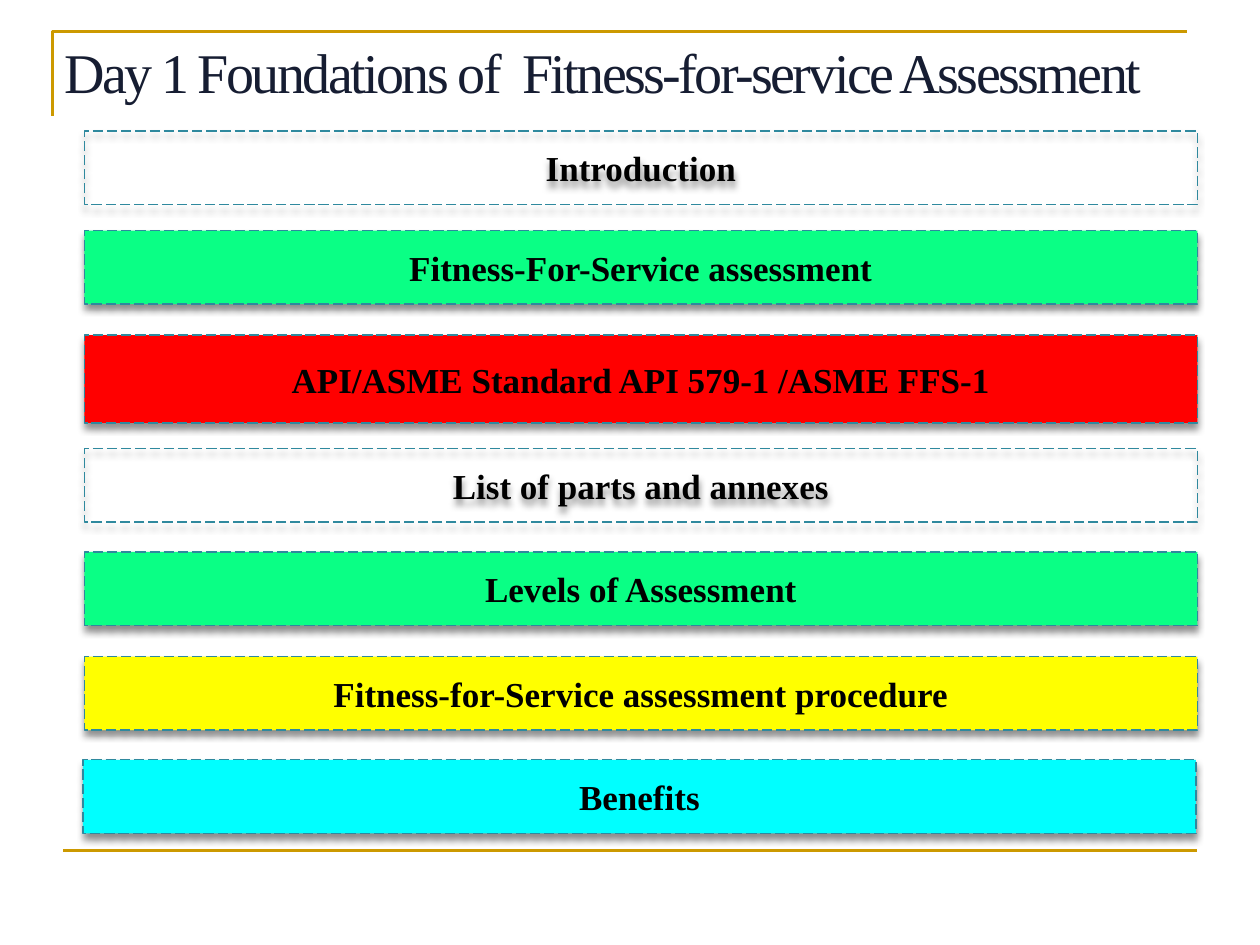
from lxml.etree import SubElement
from pptx import Presentation
from pptx.dml.color import RGBColor
from pptx.enum.dml import MSO_LINE
from pptx.enum.shapes import MSO_CONNECTOR, MSO_SHAPE
from pptx.enum.text import MSO_ANCHOR, PP_ALIGN
from pptx.oxml.ns import qn
from pptx.util import Pt

GOLD, TEAL, NAVY, BLACK = "CC9900", "2F899E", "161D32", "000000"
GREEN, RED, YELLOW, CYAN = "0AFF85", "FF0000", "FFFF00", "00FFFF"
BAR_LEFT, BAR_WIDTH, BAR_HEIGHT = 48.2, 636, 42

# text, fill, left, top, height
AGENDA = [
    ("Introduction", None, BAR_LEFT, 74.9, BAR_HEIGHT),
    ("Fitness-For-Service assessment", GREEN, BAR_LEFT, 131.8, BAR_HEIGHT),
    ("API/ASME Standard API 579-1 /ASME FFS-1", RED, BAR_LEFT, 191.5, 50.2),
    ("List of parts and annexes", None, BAR_LEFT, 256.3, BAR_HEIGHT),
    ("Levels of Assessment", GREEN, BAR_LEFT, 315.4, BAR_HEIGHT),
    ("Fitness-for-Service assessment procedure", YELLOW, BAR_LEFT, 375.2, BAR_HEIGHT),
    ("Benefits", CYAN, BAR_LEFT - 0.8, 434.2, BAR_HEIGHT),
]


def color(value):
    return RGBColor.from_string(value)


def set_values(target, values):
    for name, value in values.items():
        setattr(target, name, value)


def set_line(shape, value, width):
    shape.line.color.rgb = color(value)
    shape.line.width = Pt(width)


def write_text(shape, text, text_color, font_values, align, margins=(7.2, 3.6)):
    """Fill a shape with one paragraph; margins are horizontal and vertical."""
    horizontal, vertical = map(Pt, margins)
    frame = shape.text_frame
    set_values(frame, {
        "word_wrap": True, "vertical_anchor": MSO_ANCHOR.MIDDLE,
        "margin_left": horizontal, "margin_right": horizontal,
        "margin_top": vertical, "margin_bottom": vertical,
    })
    paragraph = frame.paragraphs[0]
    paragraph.alignment = align
    run = paragraph.add_run()
    run.text = text
    set_values(run.font, {"name": "Times New Roman", **font_values})
    run.font.color.rgb = color(text_color)
    return run


def add_drop_shadow(shape):
    shape.shadow.inherit = False
    effects = shape._element.spPr.find(qn("a:effectLst"))
    shadow = SubElement(effects, qn("a:outerShdw"), {
        "blurRad": str(Pt(4)), "dist": str(Pt(3)), "dir": "5400000",
        "algn": "ctr", "rotWithShape": "0",
    })
    shade = SubElement(shadow, qn("a:srgbClr"), val=BLACK)
    SubElement(shade, qn("a:alpha"), val="43000")


def add_corner_frame(slide):
    builder = slide.shapes.build_freeform(Pt(30.2), Pt(66.2))
    builder.add_line_segments([(Pt(30.2), Pt(18)), (Pt(678.2), Pt(18))], close=False)
    frame = builder.convert_to_shape()
    frame.fill.background()
    frame.shadow.inherit = False
    set_line(frame, GOLD, 1.5)


def add_footer_line(slide):
    line = slide.shapes.add_connector(
        MSO_CONNECTOR.STRAIGHT, Pt(36), Pt(486), Pt(684), Pt(486))
    set_line(line, GOLD, 1.5)
    SubElement(line._element.spPr, qn("a:effectLst"))


def add_title(slide, text):
    title = slide.shapes.add_textbox(Pt(36.7), Pt(15.1), Pt(646.6), Pt(51.1))
    run = write_text(title, text, NAVY, {"size": Pt(32)}, PP_ALIGN.LEFT, (0, 0))
    run.font._element.set("spc", "-150")


def add_agenda_bar(slide, text, fill, left, top, height):
    bar = slide.shapes.add_shape(
        MSO_SHAPE.RECTANGLE, Pt(left), Pt(top), Pt(BAR_WIDTH), Pt(height))
    if fill:
        bar.fill.solid()
        bar.fill.fore_color.rgb = color(fill)
    else:
        bar.fill.background()
    set_line(bar, TEAL, 0.75)
    bar.line.dash_style = MSO_LINE.LONG_DASH
    add_drop_shadow(bar)
    write_text(bar, text, BLACK, {"size": Pt(20), "bold": True}, PP_ALIGN.CENTER)


def main():
    presentation = Presentation()
    set_values(presentation, {"slide_width": Pt(720), "slide_height": Pt(540)})
    slide = presentation.slides.add_slide(presentation.slide_layouts[6])
    add_corner_frame(slide)
    add_footer_line(slide)
    add_title(slide, "Day 1 Foundations of  Fitness-for-service Assessment")
    for item in AGENDA:
        add_agenda_bar(slide, *item)
    presentation.save("out.pptx")


if __name__ == "__main__":
    main()
